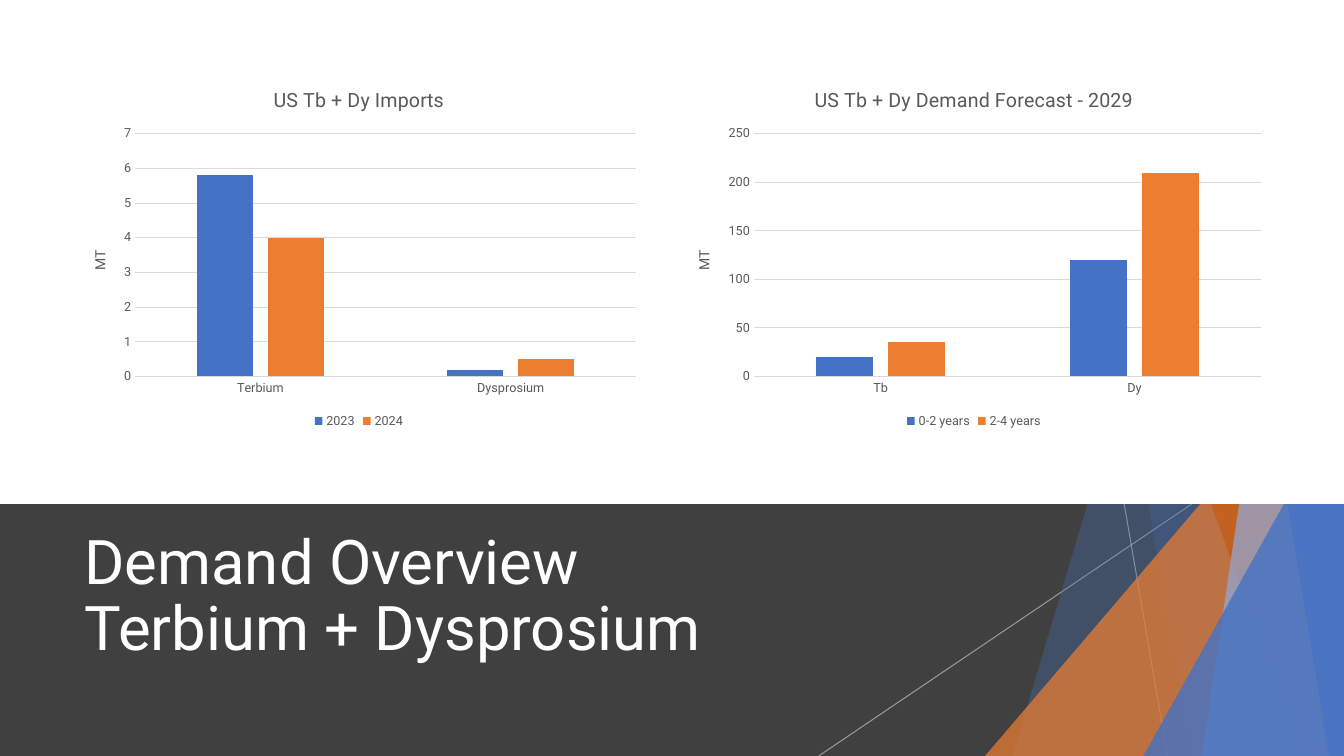
from lxml import etree
from pptx import Presentation
from pptx.chart.data import CategoryChartData
from pptx.dml.color import RGBColor
from pptx.enum.chart import XL_CHART_TYPE, XL_LEGEND_POSITION, XL_TICK_MARK
from pptx.enum.shapes import MSO_CONNECTOR, MSO_SHAPE
from pptx.enum.text import MSO_ANCHOR
from pptx.oxml.ns import qn
from pptx.util import Pt

PX = 9144
WIDTH, HEIGHT, SPLIT = 1333, 750, 500
FONT = "Roboto"
WHITE = RGBColor(0xFF, 0xFF, 0xFF)
CHARCOAL = RGBColor(0x40, 0x40, 0x40)
TEXT_GRAY = RGBColor(0x59, 0x59, 0x59)
GRID_GRAY = RGBColor(0xD9, 0xD9, 0xD9)
RAY_GRAY = RGBColor(0xBF, 0xBF, 0xBF)
BLUE = RGBColor(0x44, 0x72, 0xC4)
LIGHT_BLUE = RGBColor(0x8F, 0xAA, 0xDC)
ORANGE = RGBColor(0xED, 0x7D, 0x31)
RUST = RGBColor(0xC5, 0x5A, 0x11)


def paint(shape, color, opacity=100):
    shape.shadow.inherit = False
    shape.fill.solid()
    shape.fill.fore_color.rgb = color
    shape.line.fill.background()
    set_opacity(shape, opacity)


def set_opacity(shape, opacity):
    if opacity < 100:
        color = next(shape.element.spPr.iter(qn("a:srgbClr")))
        etree.SubElement(color, qn("a:alpha")).set("val", str(opacity * 1000))


prs = Presentation()
prs.slide_width, prs.slide_height = WIDTH * PX, HEIGHT * PX
slide = prs.slides.add_slide(prs.slide_layouts[6])
shapes = slide.shapes

title_band = shapes.add_shape(MSO_SHAPE.RECTANGLE, 0, SPLIT * PX, WIDTH * PX, (HEIGHT - SPLIT) * PX)
paint(title_band, CHARCOAL)

for top_x, bottom_x in [(1115, 1158), (1182, 812)]:
    ray = shapes.add_connector(MSO_CONNECTOR.STRAIGHT, top_x * PX, SPLIT * PX, bottom_x * PX, HEIGHT * PX)
    ray.line.color.rgb = RAY_GRAY
    ray.line.width = Pt(0.75)
    set_opacity(ray, 70)
    etree.SubElement(ray.element.spPr, qn("a:effectLst"))

facets = [
    ("blade", 1228, 1004, BLUE, 30),
    ("blade", 1050, 1183, BLUE, 20),
    ("corner", 977, 333, ORANGE, 72),
    ("blade", 1021, 1291, RUST, 70),
    ("blade", 1303, 1192, LIGHT_BLUE, 70),
    ("blade", 1196, 1318, BLUE, 65),
    ("corner", 1134, 393, BLUE, 80),
]
for kind, first, second, color, opacity in facets:
    if kind == "blade":
        outline = shapes.build_freeform(first, -1, scale=PX)
        outline.add_line_segments([(WIDTH, -1), (WIDTH, HEIGHT), (second, HEIGHT)], close=True)
        facet = outline.convert_to_shape()
    else:
        facet = shapes.add_shape(
            MSO_SHAPE.ISOSCELES_TRIANGLE,
            first * PX, second * PX, (WIDTH - first) * PX, (HEIGHT - second) * PX,
        )
        facet.adjustments[0] = 1
    paint(facet, color, opacity)

heading = shapes.add_textbox(74 * PX, 521 * PX, 940 * PX, 144 * PX).text_frame
heading.word_wrap = True
heading.vertical_anchor = MSO_ANCHOR.MIDDLE
heading.text = "Demand Overview\vTerbium + Dysprosium"
heading_lines = heading.paragraphs[0]
heading_lines.line_spacing = 0.9
for run in heading_lines.runs:
    run.font.size = Pt(44)
    run.font.name = FONT
    run.font.color.rgb = WHITE

chart_area = shapes.add_shape(MSO_SHAPE.RECTANGLE, 0, 0, WIDTH * PX, SPLIT * PX)
paint(chart_area, WHITE)

charts = [
    (70, 572, "US Tb + Dy Imports", ["Terbium", "Dysprosium"],
     {"2023": [5.8, 0.2], "2024": [4, 0.5]}, 7, 1),
    (669, 594, "US Tb + Dy Demand Forecast - 2029", ["Tb", "Dy"],
     {"0-2 years": [20, 120], "2-4 years": [35, 210]}, 250, 50),
]
for left, width, caption, metals, tonnages, maximum, step in charts:
    tonnage_data = CategoryChartData()
    tonnage_data.categories = metals
    for period, tonnage in tonnages.items():
        tonnage_data.add_series(period, tonnage)
    chart = shapes.add_chart(
        XL_CHART_TYPE.COLUMN_CLUSTERED, left * PX, 70 * PX, width * PX, 359 * PX, tonnage_data
    ).chart
    chart.font.name = FONT
    chart.font.size = Pt(10)

    plot = chart.plots[0]
    plot.vary_by_categories = False
    plot.gap_width = 219
    plot.overlap = -27
    for series, color in zip(plot.series, [BLUE, ORANGE]):
        series.format.fill.solid()
        series.format.fill.fore_color.rgb = color

    metal_axis, tonnage_axis = chart.category_axis, chart.value_axis
    tonnage_axis.minimum_scale = 0
    tonnage_axis.maximum_scale = maximum
    tonnage_axis.major_unit = step
    tonnage_axis.has_major_gridlines = True
    tonnage_axis.format.line.fill.background()
    for line in [metal_axis.format.line, tonnage_axis.major_gridlines.format.line]:
        line.color.rgb = GRID_GRAY
        line.width = Pt(0.75)
    for axis in [metal_axis, tonnage_axis]:
        axis.major_tick_mark = axis.minor_tick_mark = XL_TICK_MARK.NONE

    chart.has_legend = True
    chart.legend.position = XL_LEGEND_POSITION.BOTTOM
    chart.legend.include_in_layout = False
    for font in [metal_axis.tick_labels.font, tonnage_axis.tick_labels.font, chart.legend.font]:
        font.name = FONT
        font.size = Pt(9)
        font.color.rgb = TEXT_GRAY

    chart.has_title = True
    chart.chart_title.include_in_layout = False
    for title, text, size in [(chart.chart_title, caption, 14), (tonnage_axis.axis_title, "MT", 10)]:
        title.text_frame.text = text
        font = title.text_frame.paragraphs[0].runs[0].font
        font.name = FONT
        font.size = Pt(size)
        font.bold = False
        font.color.rgb = TEXT_GRAY

prs.save("out.pptx")
